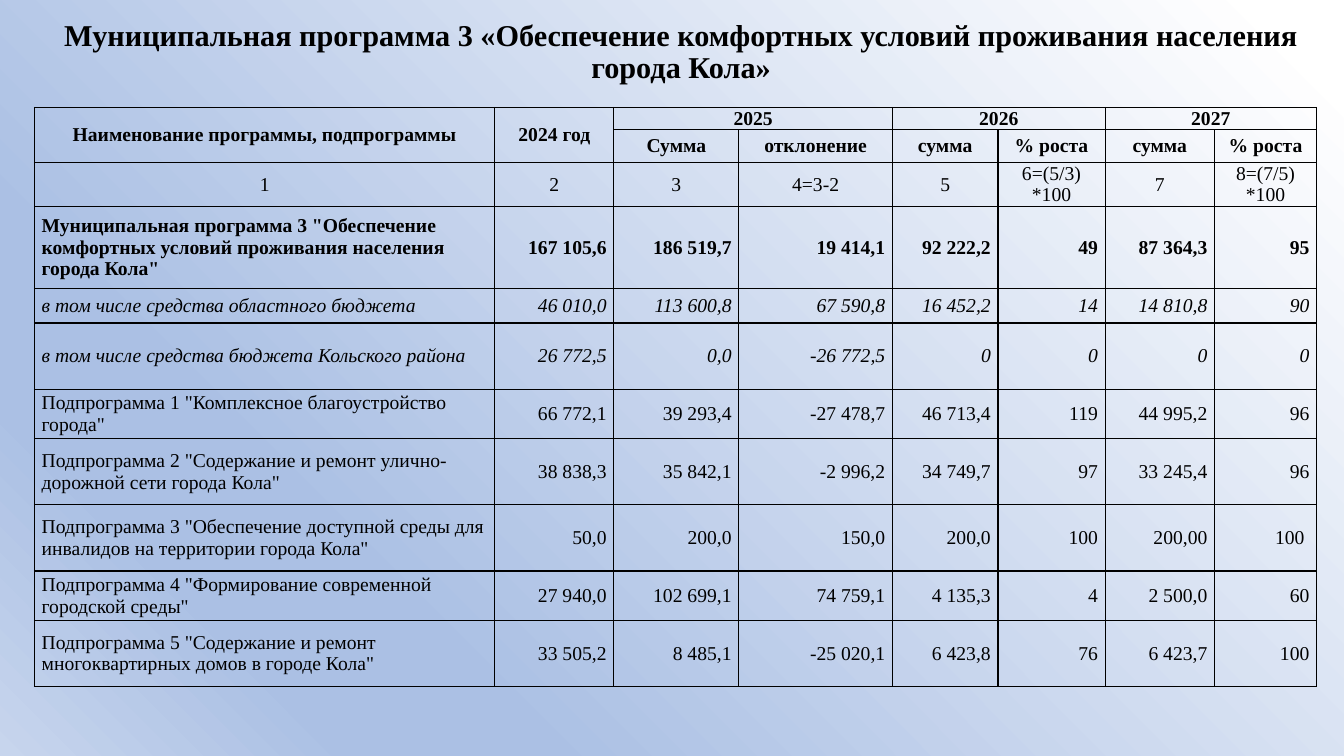
import pptx
import pptx.util
import pptx.dml.color
import pptx.enum.text
import pptx.oxml
import pptx.oxml.ns
from pptx.util import Cm

ALIGN = pptx.enum.text.PP_ALIGN
MIDDLE = pptx.enum.text.MSO_ANCHOR.MIDDLE
NS = pptx.oxml.ns.nsdecls("a")

TITLE = "Муниципальная программа 3 «Обеспечение комфортных условий проживания населения города Кола»"
BACKGROUND = [(4, "FFFFFF"), (74, "ABC0E4"), (83, "ABC0E4"), (100, "C7D5ED")]
COLUMNS = [11.6, 3, 3.15, 3.87, 2.66, 2.7, 2.76, 2.57]
ROWS = [0.56, 0.83, 1.1, 2.07, 0.87, 1.67, 1.24, 1.67, 1.67, 1.24, 1.67]
HEADER_ROWS = 3
BOLD_ROWS = (0, 1, 3)
ITALIC_ROWS = (4, 5)
# (first row, first column, last row, last column)
MERGES = [(0, 0, 1, 0), (0, 1, 1, 1), (0, 2, 0, 3), (0, 4, 0, 5), (0, 6, 0, 7)]
BUDGET = [
    ["Наименование программы, подпрограммы", "2024 год", "2025", None, "2026", None, "2027", None],
    [None, None, "Сумма", "отклонение", "сумма", "% роста", "сумма", "% роста"],
    ["1", "2", "3", "4=3-2", "5", "6=(5/3)\n*100", "7", "8=(7/5)\n*100"],
    ['Муниципальная программа 3 "Обеспечение комфортных условий проживания населения города Кола"',
     "167 105,6", "186 519,7", "19 414,1", "92 222,2", "49", "87 364,3", "95"],
    ["в том числе средства областного бюджета",
     "46 010,0", "113 600,8", "67 590,8", "16 452,2", "14", "14 810,8", "90"],
    ["в том числе средства бюджета Кольского района",
     "26 772,5", "0,0", "-26 772,5", "0", "0", "0", "0"],
    ['Подпрограмма 1 "Комплексное благоустройство города"',
     "66 772,1", "39 293,4", "-27 478,7", "46 713,4", "119", "44 995,2", "96"],
    ['Подпрограмма 2 "Содержание и ремонт улично-дорожной сети города Кола"',
     "38 838,3", "35 842,1", "-2 996,2", "34 749,7", "97", "33 245,4", "96"],
    ['Подпрограмма 3 "Обеспечение доступной среды для инвалидов на территории города Кола"',
     "50,0", "200,0", "150,0", "200,0", "100", "200,00", "100 "],
    ['Подпрограмма 4 "Формирование современной городской среды"',
     "27 940,0", "102 699,1", "74 759,1", "4 135,3", "4", "2 500,0", "60"],
    ['Подпрограмма 5 "Содержание и ремонт многоквартирных домов в городе Кола"',
     "33 505,2", "8 485,1", "-25 020,1", "6 423,8", "76", "6 423,7", "100"],
]


def color(value):
    return pptx.dml.color.RGBColor.from_string(value)


class BudgetSlide:
    font = "Times New Roman"
    ink = "000000"
    title_size = 21.6
    table_size = 14
    border = 1

    def __init__(self, prs):
        self.s = prs.slides.add_slide(prs.slide_layouts[5])

    def background(self, stops, angle):
        """Angle is in degrees, counter-clockwise."""
        fill = self.s.background.fill
        fill.gradient()
        fill.gradient_angle = angle
        stop_list = self.s.background._cSld.find(".//" + pptx.oxml.ns.qn("a:gsLst"))
        for stop in list(stop_list):
            stop_list.remove(stop)
        for percent, value in stops:
            stop_list.append(pptx.oxml.parse_xml(
                f'<a:gs {NS} pos="{percent * 1000}"><a:srgbClr val="{value}"/></a:gs>'))

    def run(self, p, text, size, bold=False, italic=False):
        r = p.add_run()
        r.text = text
        r.font.name = self.font
        r.font.size = pptx.util.Pt(size)
        r.font.bold = bold
        r.font.italic = italic
        r.font.color.rgb = color(self.ink)

    def title(self, text, left, top, width, height):
        sp = self.s.shapes.title
        sp.left, sp.top, sp.width, sp.height = Cm(left), Cm(top), Cm(width), Cm(height)
        tf = sp.text_frame
        tf.word_wrap = True
        tf.auto_size = pptx.enum.text.MSO_AUTO_SIZE.NONE
        tf.vertical_anchor = MIDDLE
        p = tf.paragraphs[0]
        p.alignment = ALIGN.CENTER
        p.line_spacing = 0.9
        self.run(p, text, self.title_size, bold=True)

    def cell_frame(self, cell):
        """Clear the fill, set the margins and draw all four borders."""
        cell.fill.background()
        cell.vertical_anchor = MIDDLE
        cell.margin_left = cell.margin_right = Cm(0.18)
        cell.margin_top = cell.margin_bottom = 0
        tc_pr = cell._tc.get_or_add_tcPr()
        for index, side in enumerate(("lnL", "lnR", "lnT", "lnB")):
            tc_pr.insert(index, pptx.oxml.parse_xml(
                f'<a:{side} {NS} w="{self.border * 12700}"><a:solidFill>'
                f'<a:srgbClr val="{self.ink}"/></a:solidFill></a:{side}>'))

    def cell_text(self, cell, text, align, bold, italic):
        tf = cell.text_frame
        for index, line in enumerate(text.split("\n")):
            p = tf.add_paragraph() if index else tf.paragraphs[0]
            p.alignment = align
            self.run(p, line, self.table_size, bold, italic)

    def table(self, data, left, top):
        frame = self.s.shapes.add_table(len(ROWS), len(COLUMNS), Cm(left), Cm(top),
                                        Cm(sum(COLUMNS)), Cm(sum(ROWS)))
        table = frame.table
        table.first_row = table.horz_banding = False
        for column, width in zip(table.columns, COLUMNS):
            column.width = Cm(width)
        for row, height in zip(table.rows, ROWS):
            row.height = Cm(height)
        for top_row, first, bottom_row, last in MERGES:
            table.cell(top_row, first).merge(table.cell(bottom_row, last))
        for i, values in enumerate(data):
            for j, text in enumerate(values):
                cell = table.cell(i, j)
                self.cell_frame(cell)
                if text is None:
                    continue
                if i < HEADER_ROWS:
                    align = ALIGN.CENTER
                else:
                    align = ALIGN.RIGHT if j else ALIGN.LEFT
                self.cell_text(cell, text, align, i in BOLD_ROWS, i in ITALIC_ROWS)


def main():
    prs = pptx.Presentation()
    prs.slide_width, prs.slide_height = Cm(33.87), Cm(19.05)
    slide = BudgetSlide(prs)
    slide.background(BACKGROUND, 225)
    slide.title(TITLE, 1.14, 0.53, 32.05, 1.6)
    slide.table(BUDGET, 0.87, 2.71)
    prs.save("out.pptx")


if __name__ == "__main__":
    main()
